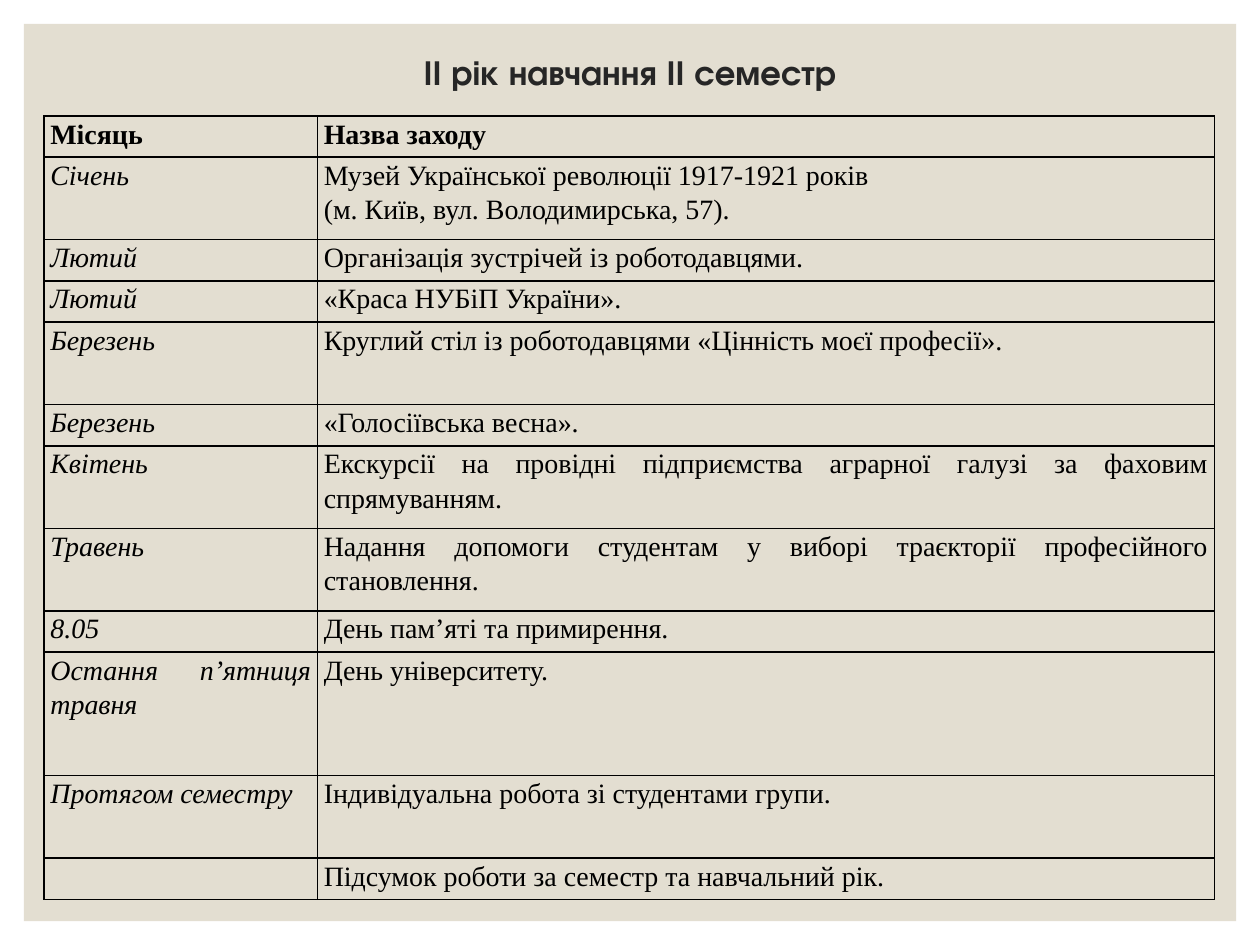
from dataclasses import dataclass

from lxml.etree import SubElement
from pptx import Presentation
from pptx.dml.color import RGBColor
from pptx.enum.shapes import MSO_SHAPE
from pptx.enum.text import MSO_ANCHOR, PP_ALIGN
from pptx.oxml.ns import qn
from pptx.util import Inches, Pt

PANEL = RGBColor(0xE3, 0xDE, 0xD1)
TITLE_INK = RGBColor(0x26, 0x26, 0x26)
BLACK = RGBColor(0, 0, 0)

TABLE_HEIGHT = 6.22
COLUMN_WIDTHS = (2.17, 7.12)


@dataclass(frozen=True)
class Event:
    month: str
    name: str
    lines: int = 1  # row height in text lines
    header: bool = False


EVENTS = (
    Event("Місяць", "Назва заходу", header=True),
    Event("Січень", "Музей Української революції 1917-1921 років\n"
          "(м. Київ, вул. Володимирська, 57).", 2),
    Event("Лютий", "Організація зустрічей із роботодавцями."),
    Event("Лютий", "«Краса НУБіП України»."),
    Event("Березень", "Круглий стіл із роботодавцями «Цінність моєї професії».", 2),
    Event("Березень", "«Голосіївська весна»."),
    Event("Квітень", "Екскурсії на провідні підприємства аграрної галузі "
          "за фаховим спрямуванням.", 2),
    Event("Травень", "Надання допомоги студентам у виборі траєкторії "
          "професійного становлення.", 2),
    Event("8.05", "День пам’яті та примирення."),
    Event("Остання п’ятниця травня", "День університету.", 3),
    Event("Протягом семестру", "Індивідуальна робота зі студентами групи.", 2),
    Event("", "Підсумок роботи за семестр та навчальний рік."),
)


def add_text(p, text: str, color: RGBColor, **font) -> None:
    r = p.add_run()
    r.text = text
    r.font.color.rgb = color
    for name, value in font.items():
        setattr(r.font, name, value)


def add_borders(cell) -> None:
    tc_pr = cell._tc.get_or_add_tcPr()
    for i, side in enumerate(("lnL", "lnR", "lnT", "lnB")):
        ln = tc_pr.makeelement(qn(f"a:{side}"), {"w": str(Pt(1))})
        fill = SubElement(ln, qn("a:solidFill"))
        SubElement(fill, qn("a:srgbClr"), val=str(BLACK))
        tc_pr.insert(i, ln)  # borders come before the fill


def fill_cell(cell, text: str, bold: bool, italic: bool) -> None:
    margins = {"margin_left": 0.05, "margin_right": 0.05,
               "margin_top": 0, "margin_bottom": 0}
    for name, value in margins.items():
        setattr(cell, name, Inches(value))
    cell.fill.background()
    add_borders(cell)
    tf = cell.text_frame
    for i, line in enumerate(text.split("\n")):
        p = tf.add_paragraph() if i else tf.paragraphs[0]
        p.alignment = PP_ALIGN.JUSTIFY
        p.line_spacing = 1.1
        add_text(p, line, BLACK, name="Times New Roman", size=Pt(16),
                 bold=bold, italic=italic)


def add_title(s, text: str) -> None:
    title = s.shapes.title
    box = {"left": 0.8, "top": 0.36, "width": 8.4, "height": 0.45}
    for name, value in box.items():
        setattr(title, name, Inches(value))
    tf = title.text_frame
    tf.word_wrap = True
    tf.vertical_anchor = MSO_ANCHOR.MIDDLE
    p = tf.paragraphs[0]
    p.alignment = PP_ALIGN.CENTER
    p.line_spacing = 0.9
    add_text(p, text, TITLE_INK, name="TeX Gyre Adventor", size=Pt(20), bold=True)


def add_panel(s) -> None:
    """Place the background panel behind the title."""
    panel = s.shapes.add_shape(MSO_SHAPE.RECTANGLE, Inches(0.19), Inches(0.19),
                               Inches(9.62), Inches(7.12))
    panel.shadow.inherit = False
    panel.fill.solid()
    panel.fill.fore_color.rgb = PANEL
    panel.line.fill.background()
    s.shapes.title.element.addprevious(panel.element)


def add_event_table(s, events: tuple[Event, ...]) -> None:
    table = s.shapes.add_table(len(events), len(COLUMN_WIDTHS), Inches(0.35),
                               Inches(0.92), Inches(sum(COLUMN_WIDTHS)),
                               Inches(TABLE_HEIGHT)).table
    table.first_row = False
    table.horz_banding = False
    for column, width in zip(table.columns, COLUMN_WIDTHS):
        column.width = Inches(width)
    line_height = TABLE_HEIGHT / sum(event.lines for event in events)
    for row, event in zip(table.rows, events):
        row.height = Inches(event.lines * line_height)
        month, name = row.cells
        fill_cell(month, event.month, bold=event.header, italic=not event.header)
        fill_cell(name, event.name, bold=event.header, italic=False)


def main() -> None:
    prs = Presentation()
    prs.slide_width, prs.slide_height = Inches(10), Inches(7.5)
    s = prs.slides.add_slide(prs.slide_layouts[5])
    add_panel(s)
    add_title(s, "ІІ рік навчання ІІ семестр")
    add_event_table(s, EVENTS)
    prs.save("out.pptx")


if __name__ == "__main__":
    main()
